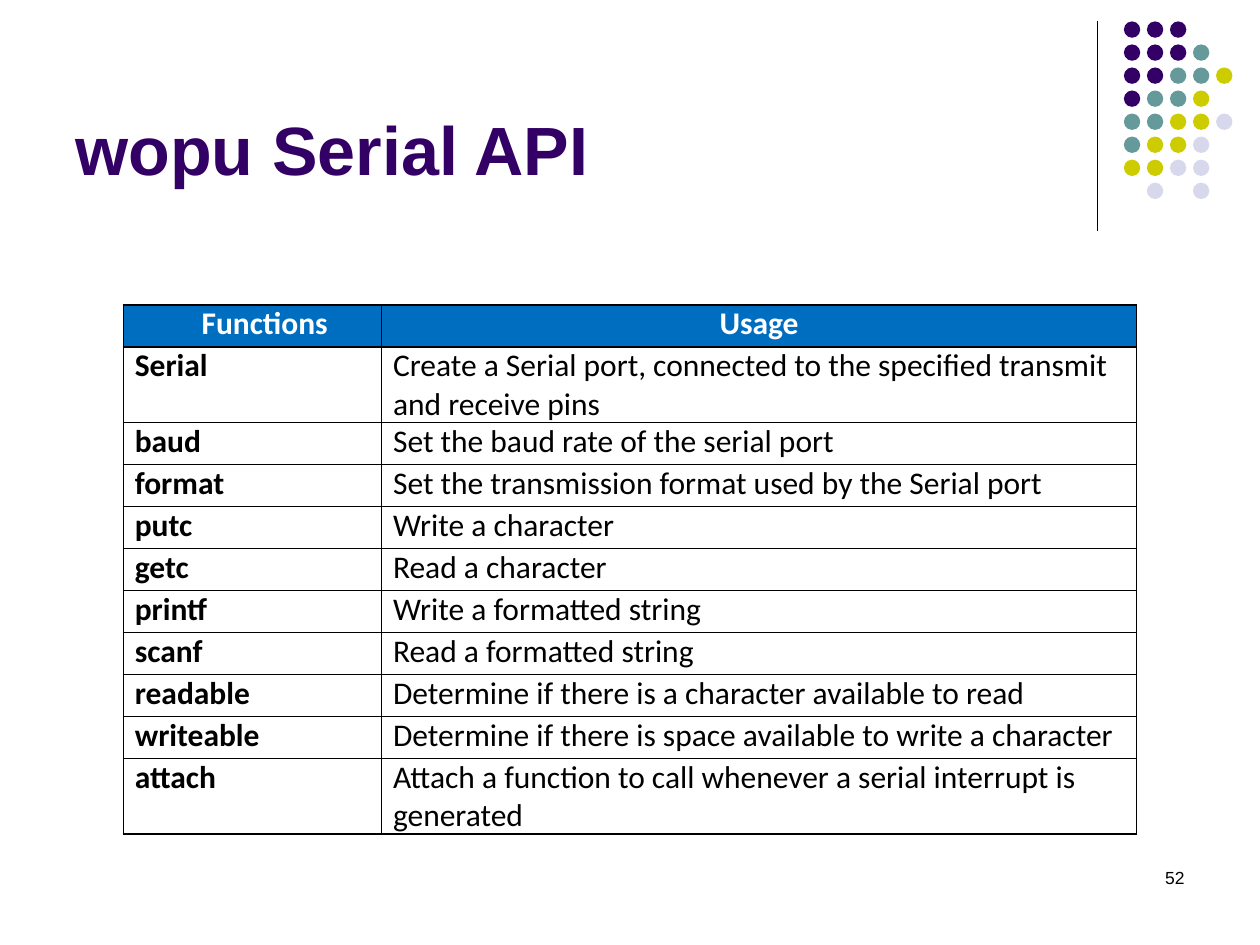
from typing import NamedTuple

from lxml.etree import SubElement
from pptx import Presentation
from pptx.dml.color import RGBColor
from pptx.enum.shapes import MSO_CONNECTOR, MSO_SHAPE
from pptx.enum.text import MSO_ANCHOR, PP_ALIGN
from pptx.oxml.ns import qn
from pptx.util import Inches, Pt

COLORS = {
    "purple": "330066",
    "teal": "669999",
    "lime": "CCCC00",
    "lavender": "D8D8EC",
    "blue": "006EC0",
    "white": "FFFFFF",
    "black": "000000",
}
DOT_COLORS = {"P": "purple", "T": "teal", "L": "lime", "V": "lavender"}
DOT_ROWS = ["PPP", "PPPT", "PPTTL", "PTTL", "TTLLV", "TLLV", "LLVV", " V V"]
DOT_LEFT, DOT_TOP, DOT_PITCH, DOT_SIZE = 8.92, 0.17, 1.28 / 7, 0.13
TABLE_LEFT, TABLE_TOP, ROW_HEIGHT = 0.98, 2.42, 1 / 3
COLUMN_WIDTHS = [2.05, 5.99]
CELL_INDENT, HEADER_INDENT = 0.09, 0.62


class TextStyle(NamedTuple):
    size: float
    font: str
    color: str
    bold: bool = False


class ApiFunction(NamedTuple):
    name: str
    usage: str


TITLE = TextStyle(39, "Arial", "purple", True)
PAGE_NUMBER = TextStyle(10, "Arial", "black")
HEADER = TextStyle(18, "Calibri", "white", True)
NAME = TextStyle(18, "Calibri", "black", True)
USAGE = TextStyle(18, "Calibri", "black")

API_FUNCTIONS = [
    ApiFunction("Serial", "Create a Serial port, connected to the specified transmit and receive pins"),
    ApiFunction("baud", "Set the baud rate of the serial port"),
    ApiFunction("format", "Set the transmission format used by the Serial port"),
    ApiFunction("putc", "Write a character"),
    ApiFunction("getc", "Read a character"),
    ApiFunction("printf", "Write a formatted string"),
    ApiFunction("scanf", "Read a formatted string"),
    ApiFunction("readable", "Determine if there is a character available to read"),
    ApiFunction("writeable", "Determine if there is space available to write a character"),
    ApiFunction("attach", "Attach a function to call whenever a serial interrupt is generated"),
]


def rgb(name: str) -> RGBColor:
    return RGBColor.from_string(COLORS[name])


def add_run(paragraph, text: str, style: TextStyle) -> None:
    run = paragraph.add_run()
    run.text = text
    run.font.size = Pt(style.size)
    run.font.name = style.font
    run.font.bold = style.bold
    run.font.color.rgb = rgb(style.color)


def add_text(slide, box: tuple, text: str, style: TextStyle, alignment, anchor) -> None:
    shape = slide.shapes.add_textbox(*map(Inches, box))
    shape.text_frame.word_wrap = True
    shape.text_frame.vertical_anchor = anchor
    paragraph = shape.text_frame.paragraphs[0]
    paragraph.alignment = alignment
    add_run(paragraph, text, style)


def add_divider(slide) -> None:
    connector = slide.shapes.add_connector(
        MSO_CONNECTOR.STRAIGHT, Inches(8.71), Inches(0.17), Inches(8.71), Inches(1.83)
    )
    connector.line.color.rgb = rgb("black")
    connector.line.width = Pt(0.75)
    SubElement(connector._element.spPr, qn("a:effectLst"))


def add_dots(slide) -> None:
    group = slide.shapes.add_group_shape()
    for row, codes in enumerate(DOT_ROWS):
        for column, code in enumerate(codes):
            if code == " ":
                continue
            dot = group.shapes.add_shape(
                MSO_SHAPE.OVAL,
                Inches(DOT_LEFT + column * DOT_PITCH),
                Inches(DOT_TOP + row * DOT_PITCH),
                Inches(DOT_SIZE),
                Inches(DOT_SIZE),
            )
            dot.shadow.inherit = False
            dot.fill.solid()
            dot.fill.fore_color.rgb = rgb(DOT_COLORS[code])
            dot.line.fill.background()


def add_borders(cell) -> None:
    properties = cell._tc.get_or_add_tcPr()
    for position, side in enumerate(("a:lnL", "a:lnR", "a:lnT", "a:lnB")):
        line = properties.makeelement(qn(side), {"w": str(Pt(1))})
        fill = SubElement(line, qn("a:solidFill"))
        SubElement(fill, qn("a:srgbClr"), {"val": COLORS["black"]})
        properties.insert(position, line)


def fill_cell(cell, text: str, style: TextStyle, indent: float = 0, background: str = "", alignment=None) -> None:
    cell.margin_left = cell.margin_right = cell.margin_top = cell.margin_bottom = 0
    if background:
        cell.fill.solid()
        cell.fill.fore_color.rgb = rgb(background)
    else:
        cell.fill.background()
    add_borders(cell)
    paragraph = cell.text_frame.paragraphs[0]
    paragraph.alignment = alignment
    if indent:
        paragraph._p.get_or_add_pPr().set("marL", str(Inches(indent)))
    add_run(paragraph, text, style)


def add_api_table(slide) -> None:
    row_count = len(API_FUNCTIONS) + 1
    table = slide.shapes.add_table(
        row_count,
        len(COLUMN_WIDTHS),
        Inches(TABLE_LEFT),
        Inches(TABLE_TOP),
        Inches(sum(COLUMN_WIDTHS)),
        Inches(ROW_HEIGHT * row_count),
    ).table
    table.horz_banding = False
    for column, width in zip(table.columns, COLUMN_WIDTHS):
        column.width = Inches(width)
    fill_cell(table.cell(0, 0), "Functions", HEADER, HEADER_INDENT, "blue")
    fill_cell(table.cell(0, 1), "Usage", HEADER, background="blue", alignment=PP_ALIGN.CENTER)
    for row, function in enumerate(API_FUNCTIONS, 1):
        fill_cell(table.cell(row, 0), function.name, NAME, CELL_INDENT)
        fill_cell(table.cell(row, 1), function.usage, USAGE, CELL_INDENT)


def main() -> None:
    presentation = Presentation()
    presentation.slide_width = Inches(10)
    presentation.slide_height = Inches(7.5)
    slide = presentation.slides.add_slide(presentation.slide_layouts[6])
    add_divider(slide)
    add_dots(slide)
    add_text(slide, (0.5, 0.13, 8.25, 1.42), "wopu Serial API", TITLE, PP_ALIGN.LEFT, MSO_ANCHOR.BOTTOM)
    add_text(slide, (7.17, 6.83, 2.33, 0.5), "52", PAGE_NUMBER, PP_ALIGN.RIGHT, MSO_ANCHOR.TOP)
    add_api_table(slide)
    presentation.save("out.pptx")


if __name__ == "__main__":
    main()
